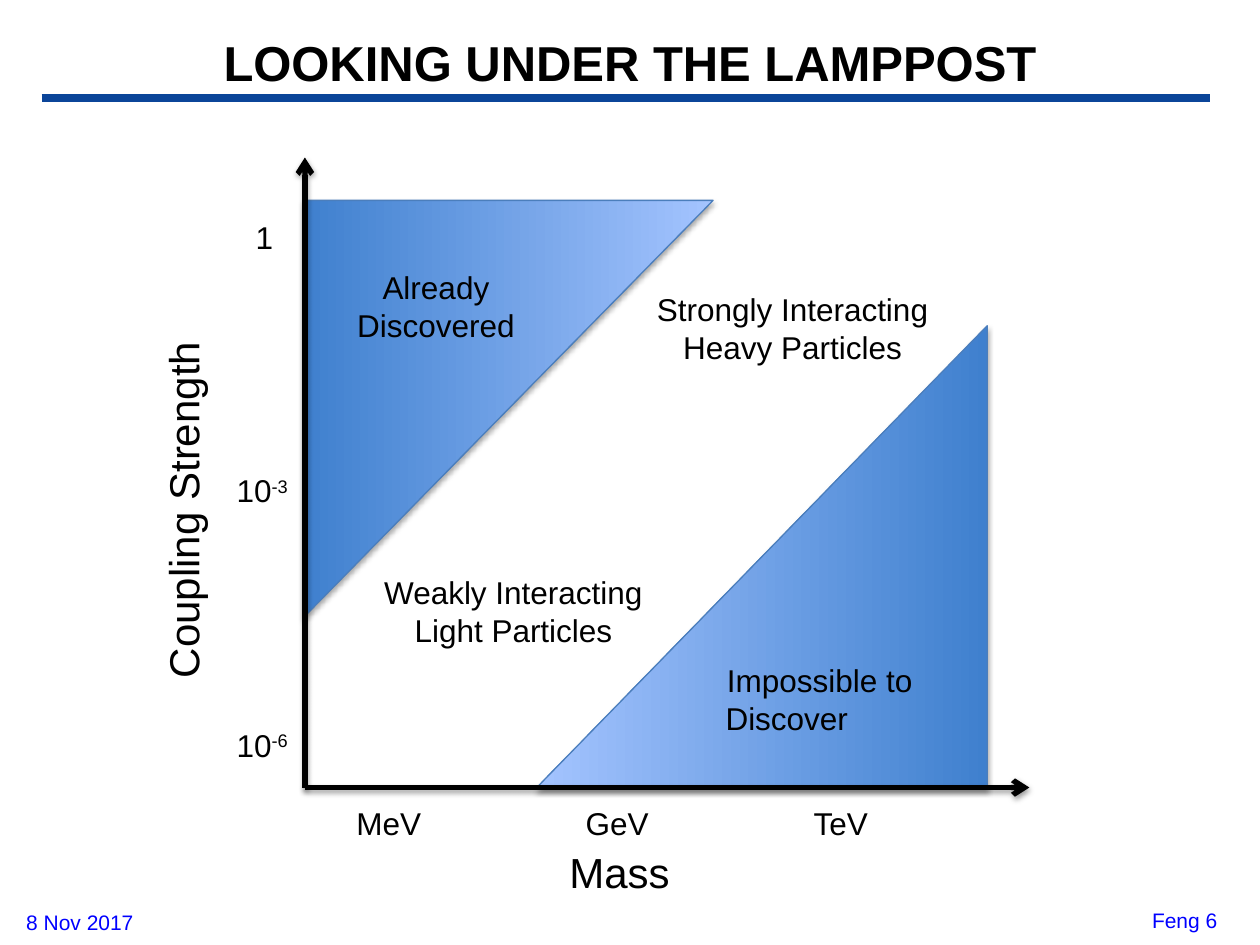
from lxml import etree
from pptx import Presentation
from pptx.dml.color import RGBColor
from pptx.enum.shapes import MSO_CONNECTOR, MSO_SHAPE
from pptx.enum.text import MSO_ANCHOR, PP_ALIGN
from pptx.oxml.ns import qn
from pptx.util import Inches, Pt

LEFT, CENTER, RIGHT = PP_ALIGN.LEFT, PP_ALIGN.CENTER, PP_ALIGN.RIGHT
MIDDLE = MSO_ANCHOR.MIDDLE
STRAIGHT = MSO_CONNECTOR.STRAIGHT
RIGHT_TRIANGLE = MSO_SHAPE.RIGHT_TRIANGLE
BLACK, BLUE = "000000", "0000FF"


def color(value):
    return RGBColor.from_string(value)


def set_shadow(shape, opacity=None, distance=None):
    effects = etree.SubElement(shape._element.spPr, qn("a:effectLst"))
    if opacity is None:
        return
    shadow = etree.SubElement(
        effects, qn("a:outerShdw"), blurRad=str(Pt(3.1)), dist=str(Pt(distance)),
        dir="5400000", rotWithShape="0")
    shade = etree.SubElement(shadow, qn("a:srgbClr"), val=BLACK)
    etree.SubElement(shade, qn("a:alpha"), val=str(opacity * 1000))


presentation = Presentation()
presentation.slide_width = Inches(10)
presentation.slide_height = Inches(7.5)
slide = presentation.slides.add_slide(presentation.slide_layouts[6])

title_rule = slide.shapes.add_connector(
    STRAIGHT, Inches(0.33), Inches(0.78), Inches(9.6), Inches(0.78))
title_rule.line.color.rgb = color("0B4599")
title_rule.line.width = Pt(4.5)
set_shadow(title_rule)

regions = [(2.38, 1.62, 3.31, 3.25, 90), (4.21, 2.63, 3.67, 3.58, 270)]
for left, top, width, height, rotation in regions:
    region = slide.shapes.add_shape(
        RIGHT_TRIANGLE, Inches(left), Inches(top), Inches(width), Inches(height))
    region.rotation = rotation
    region.fill.gradient()
    region.fill.gradient_angle = 90
    for stop, value in zip(region.fill.gradient_stops, ("3F80CE", "A4C4FF")):
        stop.color.rgb = color(value)
    region.line.color.rgb = color("4B7EBC")
    region.line.width = Pt(0.75)
    set_shadow(region, 35, 1.8)

for end_x, end_y in [(8.17, 6.25), (2.42, 1.25)]:
    axis = slide.shapes.add_connector(
        STRAIGHT, Inches(2.42), Inches(6.25), Inches(end_x), Inches(end_y))
    axis.line.color.rgb = color(BLACK)
    axis.line.width = Pt(3)
    etree.SubElement(axis._element.spPr.find(qn("a:ln")), qn("a:tailEnd"), type="arrow")
    set_shadow(axis, 38, 1.6)

labels = [
    ("LOOKING UNDER THE LAMPPOST", 0, 0.25, 10, 0.48, 28, BLACK, CENTER),
    ("8 Nov 2017", 0.11, 7.17, 2.08, 0.31, 12, BLUE, LEFT),
    ("Feng 6", 7.68, 7.15, 2.08, 0.35, 12, BLUE, RIGHT),
    ("Mass", 4.42, 6.67, 1.01, 0.5, 24, BLACK, LEFT),
    ("Coupling Strength", 0, 3.78, 2.9, 0.5, 24, BLACK, LEFT),
    ("Already\nDiscovered", 2.73, 2.08, 1.46, 0.71, 18, BLACK, CENTER),
    ("Weakly Interacting\nLight Particles", 2.94, 4.5, 2.27, 0.71, 18, BLACK, CENTER),
    ("Strongly Interacting\nHeavy Particles", 5.1, 2.25, 2.38, 0.71, 18, BLACK, CENTER),
    ("Impossible to \nDiscover", 5.66, 5.2, 1.69, 0.71, 18, BLACK, CENTER),
    ("MeV", 2.73, 6.33, 0.72, 0.4, 18, BLACK, LEFT),
    ("GeV", 4.55, 6.33, 0.71, 0.4, 18, BLACK, LEFT),
    ("TeV", 6.36, 6.33, 0.64, 0.4, 18, BLACK, LEFT),
    ("1", 1.93, 1.68, 0.34, 0.4, 18, BLACK, LEFT),
    ("10^-3", 1.78, 3.69, 0.63, 0.4, 18, BLACK, LEFT),
    ("10^-6", 1.78, 5.71, 0.63, 0.4, 18, BLACK, LEFT),
]
for text, left, top, width, height, size, text_color, alignment in labels:
    label = slide.shapes.add_textbox(
        Inches(left), Inches(top), Inches(width), Inches(height))
    text_frame = label.text_frame
    text_frame.word_wrap = size in (12, 28)
    base, _, exponent = text.partition("^")
    text_frame.text = base
    if exponent:
        run = text_frame.paragraphs[0].add_run()
        run.text = exponent
        run.font._element.set("baseline", "30000")
    for paragraph in text_frame.paragraphs:
        paragraph.alignment = alignment
        for run in paragraph.runs:
            run.font.name = "Arial"
            run.font.size = Pt(size)
            run.font.bold = size == 28
            run.font.color.rgb = color(text_color)
    if size == 28:
        text_frame.vertical_anchor = MIDDLE
    if text == "Coupling Strength":
        label.rotation = 270
    if text.startswith("Impossible"):
        text_frame.paragraphs[1].alignment = LEFT

presentation.save("out.pptx")
